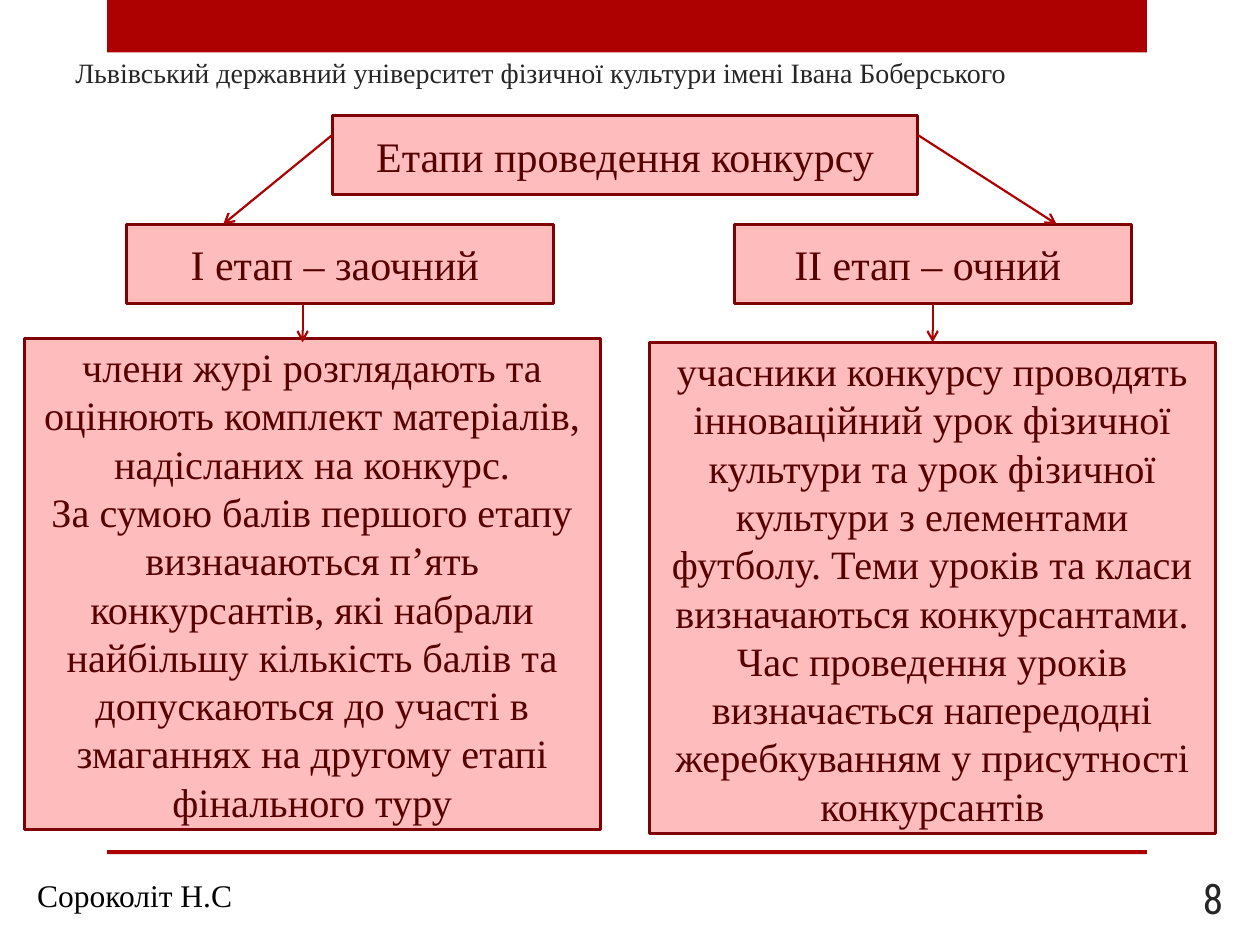
from dataclasses import dataclass

from lxml.etree import SubElement
from pptx import Presentation
from pptx.dml.color import RGBColor
from pptx.enum.shapes import MSO_CONNECTOR as Connector, MSO_SHAPE as Preset
from pptx.enum.text import MSO_ANCHOR as Anchor, PP_ALIGN as Align
from pptx.oxml.ns import qn
from pptx.util import Cm, Pt


@dataclass(frozen=True)
class Theme:
    accent: RGBColor = RGBColor(0xAD, 0x01, 0x01)
    box_fill: RGBColor = RGBColor(0xFF, 0xBC, 0xBC)
    box_line: RGBColor = RGBColor(0x80, 0x01, 0x01)
    box_text: RGBColor = RGBColor(0x56, 0x00, 0x00)
    dark: RGBColor = RGBColor(0x26, 0x26, 0x26)
    black: RGBColor = RGBColor(0x00, 0x00, 0x00)
    serif: str = "Times New Roman"
    number_font: str = "Roboto Condensed"
    header_size: int = 16
    author_size: int = 18
    body_size: int = 23
    stage_size: int = 24
    box_border: float = 1.75
    arrow_width: float = 1.25


@dataclass(frozen=True)
class Area:
    """A rectangle in centimetres."""
    left: float
    top: float
    width: float
    height: float

    def lengths(self) -> tuple:
        return Cm(self.left), Cm(self.top), Cm(self.width), Cm(self.height)


@dataclass(frozen=True)
class Box:
    area: Area
    paragraphs: tuple
    size: int


@dataclass(frozen=True)
class Arrow:
    start: tuple
    end: tuple


THEME = Theme()
STAGE_TOP, STAGE_HEIGHT, BODY_HEIGHT = 4.52, 1.6, 9.9
STAGE_BOTTOM = STAGE_TOP + STAGE_HEIGHT
ARROW_TOP, BODY_TOP = 2.72, 6.9

BARS = (Area(2.16, 0, 20.96, 1.06), Area(2.16, 17.14, 20.96, 0.08))

BOXES = (
    Box(Area(6.7, 2.33, 11.8, STAGE_HEIGHT), ("Етапи проведення конкурсу",), THEME.stage_size),
    Box(Area(14.81, STAGE_TOP, 8, STAGE_HEIGHT), ("ІІ етап – очний ",), THEME.stage_size),
    Box(Area(2.55, STAGE_TOP, 8.61, STAGE_HEIGHT), ("І етап – заочний ",), THEME.stage_size),
    Box(Area(0.5, 6.82, 11.6, BODY_HEIGHT), (
        "члени журі розглядають та оцінюють комплект матеріалів, надісланих на конкурс.",
        "За сумою балів першого етапу визначаються п’ять конкурсантів, які набрали "
        "найбільшу кількість балів та допускаються до участі в змаганнях на другому "
        "етапі фінального туру",
    ), THEME.body_size),
    Box(Area(13.1, BODY_TOP, 11.4, BODY_HEIGHT), (
        "учасники конкурсу проводять інноваційний урок фізичної культури та урок "
        "фізичної культури з елементами футболу. Теми уроків та класи визначаються "
        "конкурсантами.",
        "Час проведення уроків визначається напередодні жеребкуванням у присутності "
        "конкурсантів",
    ), THEME.body_size),
)

ARROWS = (
    Arrow((6.7, ARROW_TOP), (4.5, STAGE_TOP)),
    Arrow((18.5, ARROW_TOP), (21.3, STAGE_TOP)),
    Arrow((6.1, STAGE_BOTTOM), (6.1, BODY_TOP)),
    Arrow((18.8, STAGE_BOTTOM), (18.8, BODY_TOP)),
)


def write_text(shape, paragraphs: tuple, *, size: int, color: RGBColor,
               font: str = THEME.serif, align=Align.LEFT, anchor=Anchor.TOP) -> None:
    frame = shape.text_frame
    frame.word_wrap = True
    frame.vertical_anchor = anchor
    for index, text in enumerate(paragraphs):
        paragraph = frame.paragraphs[0] if index == 0 else frame.add_paragraph()
        paragraph.alignment = align
        run = paragraph.add_run()
        run.text = text
        run.font.name = font
        run.font.size = Pt(size)
        run.font.color.rgb = color


def draw_rectangle(slide, area: Area, fill: RGBColor):
    shape = slide.shapes.add_shape(Preset.RECTANGLE, *area.lengths())
    shape.shadow.inherit = False
    shape.fill.solid()
    shape.fill.fore_color.rgb = fill
    shape.line.fill.background()
    return shape


def draw_box(slide, box: Box) -> None:
    shape = draw_rectangle(slide, box.area, THEME.box_fill)
    shape.line.color.rgb = THEME.box_line
    shape.line.width = Pt(THEME.box_border)
    write_text(shape, box.paragraphs, size=box.size, color=THEME.box_text,
               align=Align.CENTER, anchor=Anchor.MIDDLE)


def draw_arrow(slide, arrow: Arrow) -> None:
    points = (Cm(value) for value in arrow.start + arrow.end)
    connector = slide.shapes.add_connector(Connector.STRAIGHT, *points)
    connector.line.color.rgb = THEME.accent
    connector.line.width = Pt(THEME.arrow_width)
    SubElement(connector.line._get_or_add_ln(), qn("a:tailEnd"), type="arrow")
    SubElement(connector._element.spPr, qn("a:effectLst"))


def draw_label(slide, area: Area, text: str, **text_format) -> None:
    write_text(slide.shapes.add_textbox(*area.lengths()), (text,), **text_format)


def main() -> None:
    presentation = Presentation()
    presentation.slide_width, presentation.slide_height = Cm(25.4), Cm(19.05)
    slide = presentation.slides.add_slide(presentation.slide_layouts[6])

    # Frame of the page
    for bar in BARS:
        draw_rectangle(slide, bar, THEME.accent)

    # Header and author
    draw_label(slide, Area(1.27, 0.76, 22.86, 1.17),
               "Львівський державний університет фізичної культури імені Івана Боберського",
               size=THEME.header_size, color=THEME.dark, anchor=Anchor.BOTTOM)
    draw_label(slide, Area(0.5, 17.53, 4.5, 1.02), "Сороколіт Н.С",
               size=THEME.author_size, color=THEME.black)

    # Diagram of the contest stages
    for box in BOXES:
        draw_box(slide, box)
    for arrow in ARROWS:
        draw_arrow(slide, arrow)

    # Page number
    draw_label(slide, Area(22.8, 17.59, 2.11, 1.02), "8", size=THEME.stage_size,
               color=THEME.dark, font=THEME.number_font, align=Align.RIGHT,
               anchor=Anchor.MIDDLE)

    presentation.save("out.pptx")


if __name__ == "__main__":
    main()
